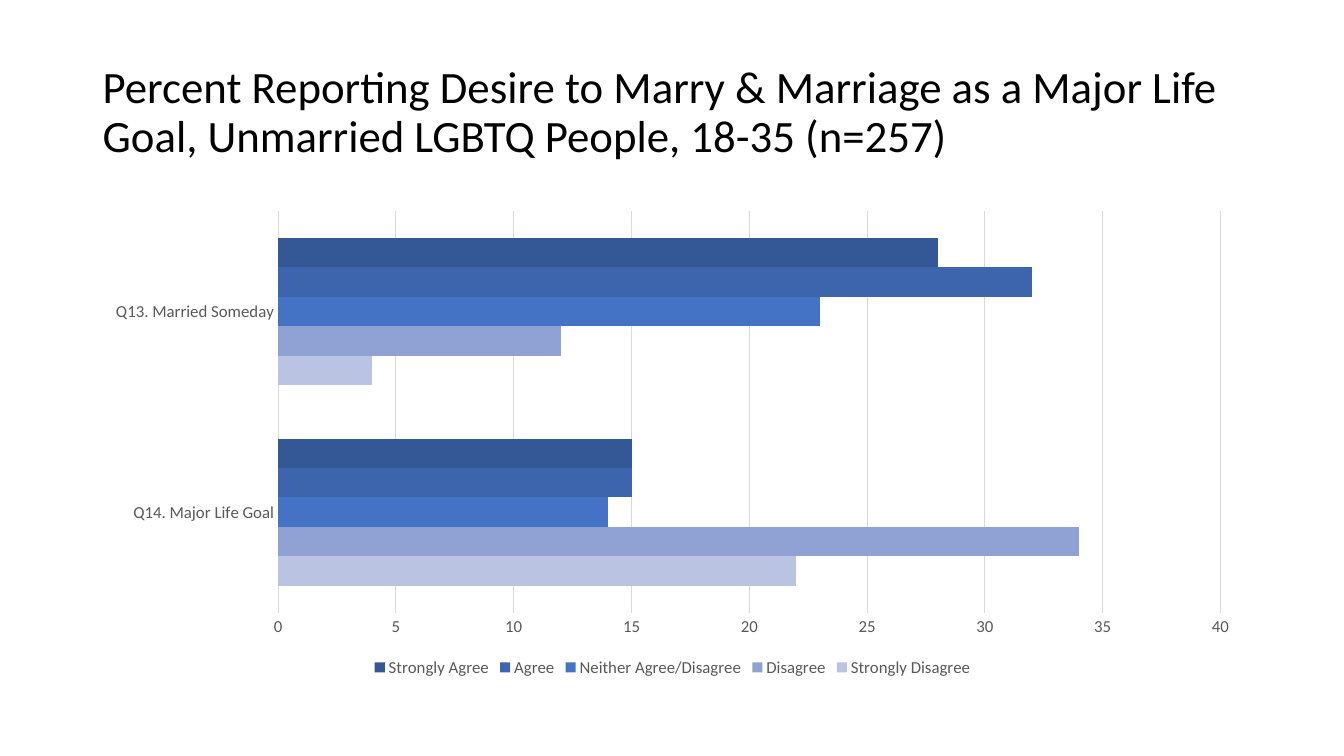
from pptx import Presentation
from pptx.chart.data import CategoryChartData
from pptx.dml.color import RGBColor
from pptx.enum.chart import XL_CHART_TYPE, XL_LEGEND_POSITION, XL_TICK_MARK
from pptx.enum.text import MSO_ANCHOR
from pptx.util import Inches, Pt

BAR_CLUSTERED = XL_CHART_TYPE.BAR_CLUSTERED
LEGEND_BOTTOM = XL_LEGEND_POSITION.BOTTOM
NO_TICK = XL_TICK_MARK.NONE
MIDDLE = MSO_ANCHOR.MIDDLE

BLACK = RGBColor(0x00, 0x00, 0x00)
GRAY = RGBColor(0x59, 0x59, 0x59)
LIGHT_GRAY = RGBColor(0xD9, 0xD9, 0xD9)

TITLE = (
    "Percent Reporting Desire to Marry & Marriage as a Major Life Goal, "
    "Unmarried LGBTQ People, 18-35 (n=257)"
)
QUESTIONS = ["Q14. Major Life Goal", "Q13. Married Someday"]
ANSWERS = [
    ("Strongly Disagree", (22, 4), RGBColor(0xBA, 0xC4, 0xE2)),
    ("Disagree", (34, 12), RGBColor(0x90, 0xA2, 0xD3)),
    ("Neither Agree/Disagree", (14, 23), RGBColor(0x44, 0x72, 0xC4)),
    ("Agree", (15, 32), RGBColor(0x3C, 0x65, 0xAE)),
    ("Strongly Agree", (15, 28), RGBColor(0x34, 0x57, 0x95)),
]


class SlideBuilder:
    font_name = "Calibri"
    left = Inches(0.92)
    width = Inches(11.5)

    def __init__(self, slide):
        self.slide = slide

    def style_font(self, font, size, color):
        for name, value in {"name": self.font_name, "size": Pt(size)}.items():
            setattr(font, name, value)
        font.color.rgb = color

    def style_line(self, line):
        line.color.rgb = LIGHT_GRAY
        line.width = Pt(0.75)

    def add_title(self, text, top, height):
        shape = self.slide.shapes.add_textbox(self.left, top, self.width, height)
        frame = shape.text_frame
        for name, value in {"word_wrap": True, "vertical_anchor": MIDDLE}.items():
            setattr(frame, name, value)
        paragraph = frame.paragraphs[0]
        paragraph.line_spacing = 0.9
        run = paragraph.add_run()
        run.text = text
        self.style_font(run.font, 32, BLACK)

    def add_bar_chart(self, categories, answers, top, height):
        data = CategoryChartData()
        data.categories = categories
        for name, values, _ in answers:
            data.add_series(name, values)
        chart = self.slide.shapes.add_chart(
            BAR_CLUSTERED, self.left, top, self.width, height, data
        ).chart
        self.style_font(chart.font, 10, BLACK)
        chart.has_title = False

        plot = chart.plots[0]
        for name, value in {"gap_width": 182, "vary_by_categories": False}.items():
            setattr(plot, name, value)
        for series, (_, _, color) in zip(plot.series, answers):
            series.format.fill.solid()
            series.format.fill.fore_color.rgb = color

        for axis in (chart.category_axis, chart.value_axis):
            axis.major_tick_mark = axis.minor_tick_mark = NO_TICK
            self.style_font(axis.tick_labels.font, 12, GRAY)
        self.style_line(chart.category_axis.format.line)

        value_axis = chart.value_axis
        scale = {
            "minimum_scale": 0,
            "maximum_scale": 40,
            "major_unit": 5,
            "has_major_gridlines": True,
        }
        for name, value in scale.items():
            setattr(value_axis, name, value)
        value_axis.format.line.fill.background()
        self.style_line(value_axis.major_gridlines.format.line)

        chart.has_legend = True
        legend = chart.legend
        placement = {"position": LEGEND_BOTTOM, "include_in_layout": False}
        for name, value in placement.items():
            setattr(legend, name, value)
        self.style_font(legend.font, 12, GRAY)


def main():
    presentation = Presentation()
    presentation.slide_width = Inches(13.33)
    presentation.slide_height = Inches(7.5)
    slide = presentation.slides.add_slide(presentation.slide_layouts[6])
    builder = SlideBuilder(slide)
    builder.add_title(TITLE, Inches(0.4), Inches(1.45))
    builder.add_bar_chart(QUESTIONS, ANSWERS, Inches(2), Inches(4.76))
    presentation.save("out.pptx")


if __name__ == "__main__":
    main()
